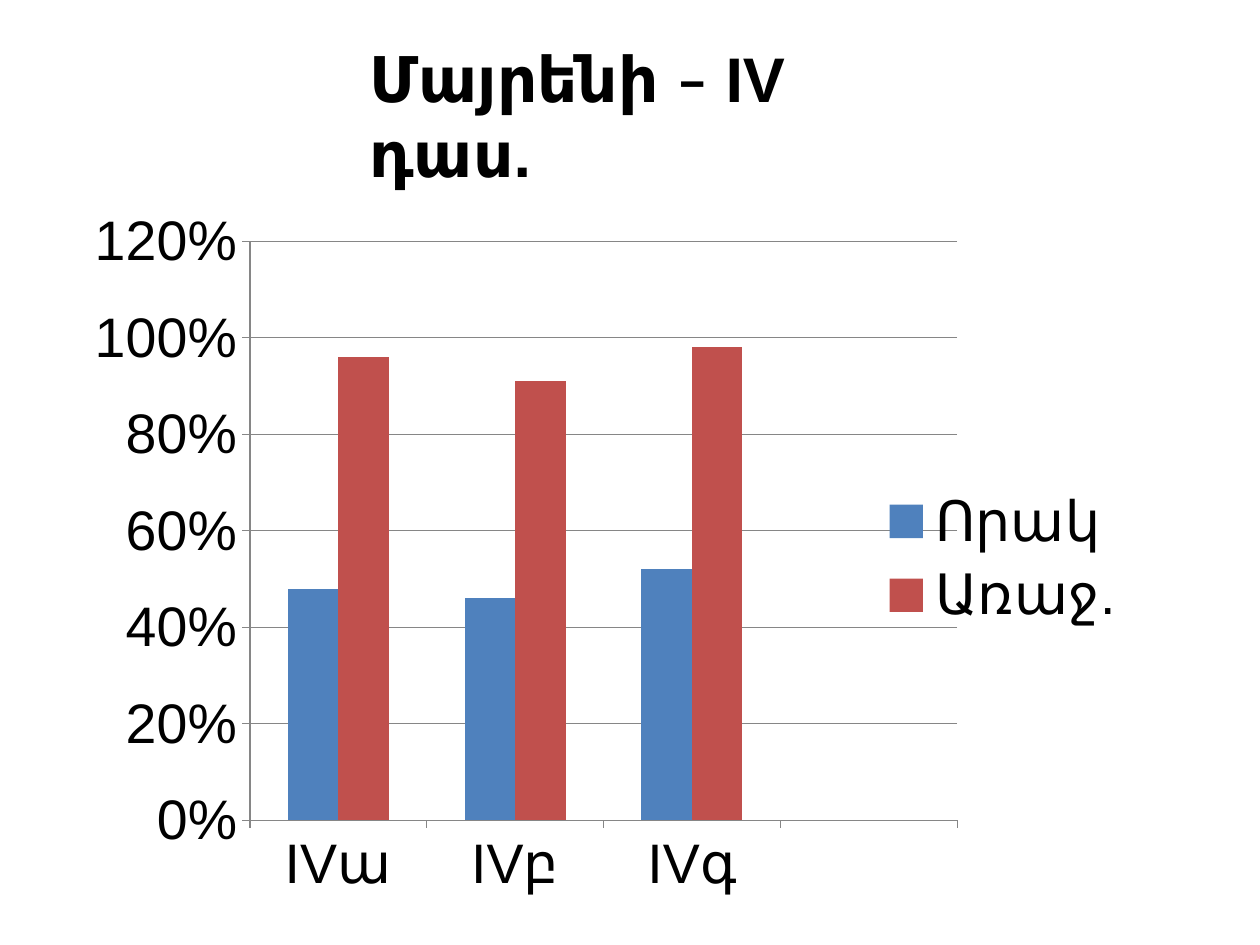
from lxml import etree
from pptx import Presentation
from pptx.chart.data import CategoryChartData
from pptx.dml.color import RGBColor
from pptx.enum.chart import XL_CHART_TYPE, XL_LEGEND_POSITION, XL_TICK_MARK
from pptx.enum.text import MSO_ANCHOR, MSO_AUTO_SIZE
from pptx.oxml.ns import qn
from pptx.util import Pt

CLUSTERED = XL_CHART_TYPE.COLUMN_CLUSTERED
LEGEND_RIGHT = XL_LEGEND_POSITION.RIGHT
TICK_OUT, TICK_NONE = XL_TICK_MARK.OUTSIDE, XL_TICK_MARK.NONE
MIDDLE = MSO_ANCHOR.MIDDLE
GROW = MSO_AUTO_SIZE.SHAPE_TO_FIT_TEXT

COLORS = {"text": "000000", "line": "868686",
          "quality": "4F81BD", "progress": "C0504D"}
TITLE_FONT = {"size": Pt(36), "bold": True}
LABEL_FONT = {"size": Pt(32), "name": "Arial"}
PLOT_AREA = {"x": 0.14, "y": 0.04, "w": 0.68, "h": 0.84}

CLASSES = ["IVա", "IVբ", "IVգ", ""]
RESULTS = [("Որակ", "quality", (0.48, 0.46, 0.52, None)),
           ("Առաջ.", "progress", (0.96, 0.91, 0.98, None))]


def rgb(key):
    return RGBColor.from_string(COLORS[key])


def apply(target, values):
    for attribute, value in values.items():
        setattr(target, attribute, value)


def style_font(font, values):
    apply(font, values)
    font.color.rgb = rgb("text")


def add_title(slide, left, top, width, height):
    title = slide.shapes.add_textbox(left, top, width, height).text_frame
    apply(title, {"word_wrap": True, "auto_size": GROW,
                  "vertical_anchor": MIDDLE})
    for words, face in (("Մայրենի ", "Arial"), ("–", "Calibri"),
                        (" IV դաս.", "Arial")):
        run = title.paragraphs[0].add_run()
        run.text = words
        style_font(run.font, {**TITLE_FONT, "name": face})


def place_plot(chart):
    """Fix the inner plot area as fractions of the chart."""
    plot_area = chart._chartSpace.chart.plotArea
    for old in plot_area.findall(qn("c:layout")):
        plot_area.remove(old)
    layout = etree.Element(qn("c:layout"))
    plot_area.insert(0, layout)
    manual = etree.SubElement(layout, qn("c:manualLayout"))
    settings = {"layoutTarget": "inner", "xMode": "edge", "yMode": "edge",
                **PLOT_AREA}
    for tag, value in settings.items():
        etree.SubElement(manual, qn(f"c:{tag}")).set("val", str(value))


def add_results_chart(slide, left, top, width, height):
    data = CategoryChartData(number_format="0%")
    data.categories = CLASSES
    for name, _, values in RESULTS:
        data.add_series(name, values)
    chart = slide.shapes.add_chart(CLUSTERED, left, top, width, height,
                                   data).chart
    chart.has_title = False
    style_font(chart.font, {"size": Pt(10), "name": "Calibri"})

    # Columns
    columns = chart.plots[0]
    apply(columns, {"gap_width": 150, "overlap": 0,
                    "vary_by_categories": False})
    for series, (_, color, _) in zip(columns.series, RESULTS):
        series.format.fill.solid()
        series.format.fill.fore_color.rgb = rgb(color)

    # Axes and gridlines
    scale = chart.value_axis
    apply(scale, {"minimum_scale": 0, "maximum_scale": 1.2,
                  "major_unit": 0.2, "has_major_gridlines": True})
    apply(scale.tick_labels, {"number_format": "0%",
                              "number_format_is_linked": False})
    for axis in (chart.category_axis, scale):
        apply(axis, {"major_tick_mark": TICK_OUT,
                     "minor_tick_mark": TICK_NONE})
        style_font(axis.tick_labels.font, LABEL_FONT)
    for ruled in (chart.category_axis, scale, scale.major_gridlines):
        ruled.format.line.color.rgb = rgb("line")
        ruled.format.line.width = Pt(0.75)

    # Legend
    chart.has_legend = True
    apply(chart.legend, {"position": LEGEND_RIGHT,
                         "include_in_layout": False})
    style_font(chart.legend.font, LABEL_FONT)
    place_plot(chart)


def main():
    deck = Presentation()
    apply(deck, {"slide_width": Pt(720), "slide_height": Pt(540)})
    slide = deck.slides.add_slide(deck.slide_layouts[6])
    add_results_chart(slide, Pt(54), Pt(120), Pt(600), Pt(396))
    add_title(slide, Pt(204), Pt(40), Pt(329), Pt(51))
    deck.save("out.pptx")


if __name__ == "__main__":
    main()
